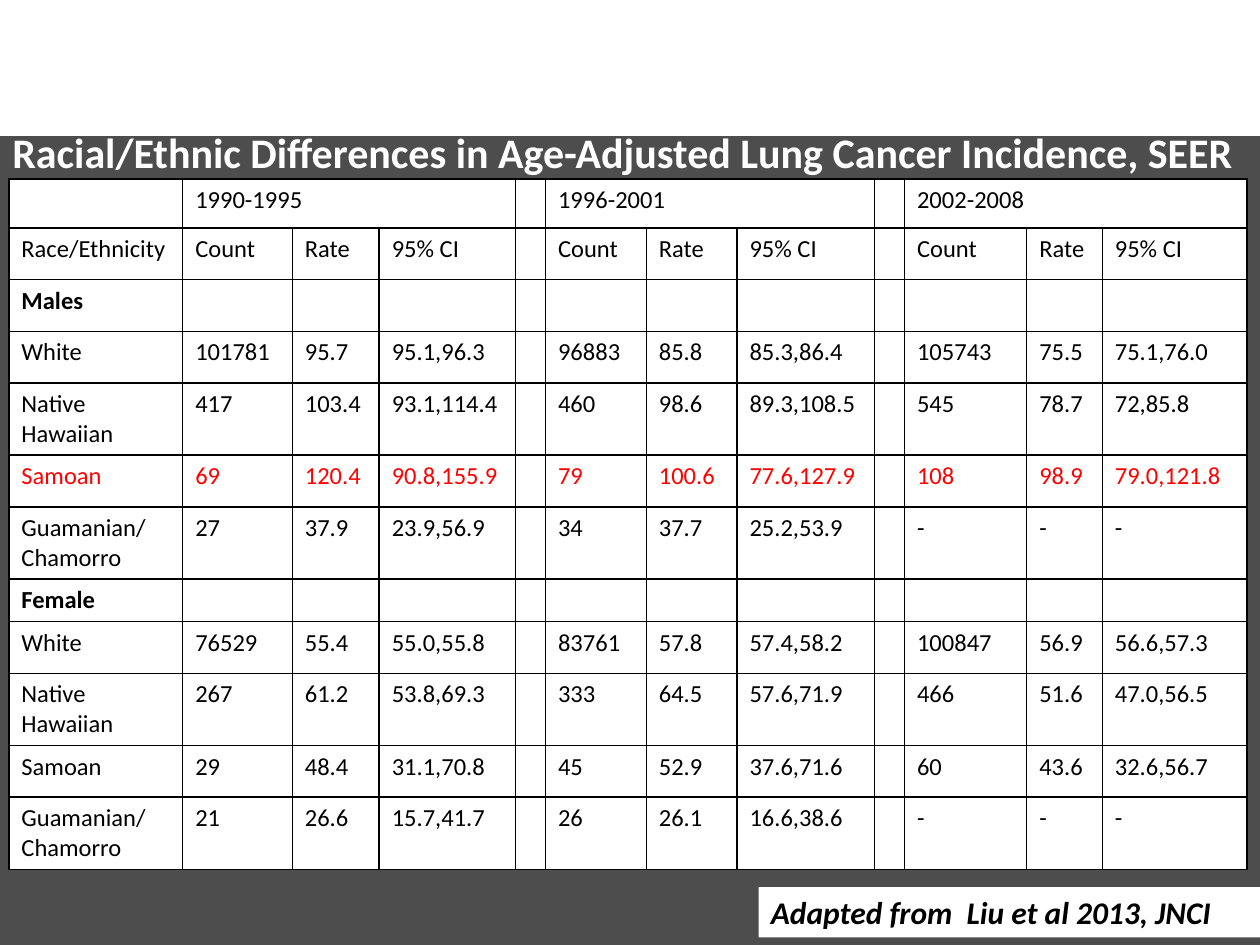
from dataclasses import dataclass

from lxml import etree
from pptx import Presentation
from pptx.dml.color import RGBColor
from pptx.enum import shapes, text
from pptx.oxml.ns import qn
from pptx.util import Inches, Pt

WHITE = RGBColor(0xFF, 0xFF, 0xFF)
BLACK = RGBColor(0x00, 0x00, 0x00)
RED = RGBColor(0xFF, 0x00, 0x00)
GREY = RGBColor(0x4D, 0x4D, 0x4D)
FONT = "Calibri"
WIDTH, HEIGHT = Inches(10), Inches(7.5)

PERIODS = ("1990-1995", "1996-2001", "2002-2008")
MEASURES = ("Count", "Rate", "95% CI")
COLUMN_WIDTHS = (1.38, 0.87, 0.69, 1.08, 0.24, 0.8, 0.72, 1.09, 0.24, 0.97, 0.6, 1.15)
PERIOD_STEP = len(MEASURES) + 1  # three measures and a narrow gap column
ONE_LINE, TWO_LINES = 0.41, 0.57


@dataclass
class Row:
    label: str
    periods: tuple = ()
    height: float = ONE_LINE
    color: RGBColor = BLACK
    bold: bool = False


NO_DATA = ("-", "-", "-")
ROWS = (
    Row("", tuple((period, "", "") for period in PERIODS), 0.39),
    Row("Race/Ethnicity", (MEASURES,) * len(PERIODS)),
    Row("Males", bold=True),
    Row("White", (("101781", "95.7", "95.1,96.3"), ("96883", "85.8", "85.3,86.4"),
                  ("105743", "75.5", "75.1,76.0"))),
    Row("Native Hawaiian", (("417", "103.4", "93.1,114.4"), ("460", "98.6", "89.3,108.5"),
                            ("545", "78.7", "72,85.8")), TWO_LINES),
    Row("Samoan", (("69", "120.4", "90.8,155.9"), ("79", "100.6", "77.6,127.9"),
                   ("108", "98.9", "79.0,121.8")), color=RED),
    Row("Guamanian/\nChamorro", (("27", "37.9", "23.9,56.9"), ("34", "37.7", "25.2,53.9"),
                                 NO_DATA), TWO_LINES),
    Row("Female", height=0.33, bold=True),
    Row("White", (("76529", "55.4", "55.0,55.8"), ("83761", "57.8", "57.4,58.2"),
                  ("100847", "56.9", "56.6,57.3"))),
    Row("Native Hawaiian", (("267", "61.2", "53.8,69.3"), ("333", "64.5", "57.6,71.9"),
                            ("466", "51.6", "47.0,56.5")), TWO_LINES),
    Row("Samoan", (("29", "48.4", "31.1,70.8"), ("45", "52.9", "37.6,71.6"),
                   ("60", "43.6", "32.6,56.7"))),
    Row("Guamanian/\nChamorro", (("21", "26.6", "15.7,41.7"), ("26", "26.1", "16.6,38.6"),
                                 NO_DATA), TWO_LINES),
)


def format_runs(text_frame, size: float, color: RGBColor, bold=False, italic=False) -> None:
    for paragraph in text_frame.paragraphs:
        for run in paragraph.runs:
            font = run.font
            font.name, font.size = FONT, Pt(size)
            font.bold, font.italic = bold, italic
            font.color.rgb = color


def add_box(slide, left: int, top: int, width: int, height: int, fill: RGBColor):
    shape = slide.shapes.add_shape(shapes.MSO_SHAPE.RECTANGLE, left, top, width, height)
    shape.shadow.inherit = False
    shape.fill.solid()
    shape.fill.fore_color.rgb = fill
    shape.line.fill.background()
    return shape


def add_borders(cell) -> None:
    properties = cell._tc.get_or_add_tcPr()
    for position, side in enumerate(("a:lnL", "a:lnR", "a:lnT", "a:lnB")):
        line = etree.Element(qn(side), w=str(Pt(1)))
        fill = etree.SubElement(line, qn("a:solidFill"))
        etree.SubElement(fill, qn("a:srgbClr"), val=str(BLACK))
        properties.insert(position, line)


def fill_cell(cell, content: str, row: Row) -> None:
    cell.fill.solid()
    cell.fill.fore_color.rgb = WHITE
    add_borders(cell)
    if content:
        cell.text_frame.text = content
        format_runs(cell.text_frame, 14, row.color, row.bold)
    else:  # keeps empty cells from stretching their row
        paragraph = cell.text_frame.paragraphs[0]
        etree.SubElement(paragraph._p, qn("a:endParaRPr"), sz="1400")


def row_contents(row: Row) -> list[str]:
    contents = [row.label] + [""] * (len(COLUMN_WIDTHS) - 1)
    for index, values in enumerate(row.periods):
        start = 1 + index * PERIOD_STEP
        contents[start:start + len(values)] = values
    return contents


def add_incidence_table(slide) -> None:
    total_height = sum(row.height for row in ROWS)
    table = slide.shapes.add_table(
        len(ROWS), len(COLUMN_WIDTHS), Inches(0.07), Inches(1.42),
        Inches(sum(COLUMN_WIDTHS)), Inches(total_height)).table
    table.first_row = table.horz_banding = False
    for column, width in zip(table.columns, COLUMN_WIDTHS):
        column.width = Inches(width)
    for table_row, row in zip(table.rows, ROWS):
        table_row.height = Inches(row.height)
        for cell, content in zip(table_row.cells, row_contents(row)):
            fill_cell(cell, content, row)
    # Each period heads its three measures
    for start in range(1, len(COLUMN_WIDTHS), PERIOD_STEP):
        table.cell(0, start).merge(table.cell(0, start + len(MEASURES) - 1))


def main() -> None:
    presentation = Presentation()
    presentation.slide_width, presentation.slide_height = WIDTH, HEIGHT
    slide = presentation.slides.add_slide(presentation.slide_layouts[5])

    # Grey backdrop, behind everything
    top = Inches(1.08)
    backdrop = add_box(slide, 0, top, WIDTH, HEIGHT - top, GREY)
    slide.shapes._spTree.insert(2, backdrop._element)

    # Title
    title = slide.shapes.title
    title.left, title.top = Inches(-0.02), Inches(0.58)
    title.width, title.height = WIDTH, Inches(1.25)
    frame = title.text_frame
    frame.text = "Racial/Ethnic Differences in Age-Adjusted Lung Cancer Incidence, SEER "
    frame.auto_size = text.MSO_AUTO_SIZE.NONE
    frame.vertical_anchor = text.MSO_ANCHOR.MIDDLE
    frame.paragraphs[0].alignment = text.PP_ALIGN.CENTER
    format_runs(frame, 24, WHITE, bold=True)

    add_incidence_table(slide)

    # Citation
    left = Inches(6.02)
    citation = add_box(slide, left, Inches(7.04), WIDTH - left, Inches(0.4), WHITE)
    frame = citation.text_frame
    frame.text = "Adapted from  Liu et al 2013, JNCI"
    frame.word_wrap = True
    frame.vertical_anchor = text.MSO_ANCHOR.TOP
    frame.paragraphs[0].alignment = text.PP_ALIGN.LEFT
    format_runs(frame, 18, BLACK, bold=True, italic=True)

    presentation.save("out.pptx")


if __name__ == "__main__":
    main()
